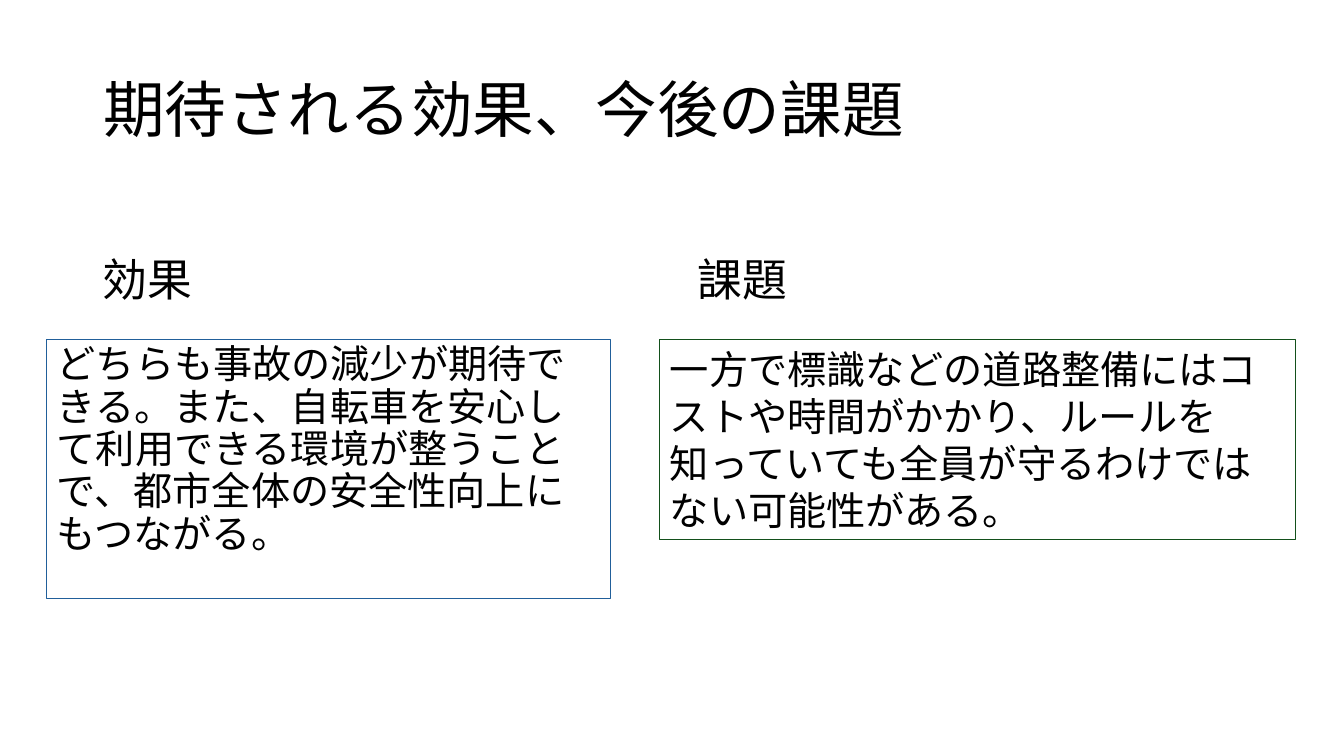
import dataclasses
import typing

import lxml.etree
import pptx
import pptx.dml.color
import pptx.enum.text
import pptx.oxml.ns
import pptx.text.text
import pptx.util

PX = 914400 / 100.8  # EMU in one px
FONT = "Noto Sans CJK JP"
COLOURS = {"text": "000000", "effects": "215F9A", "issues": "13501B"}


@dataclasses.dataclass(frozen=True)
class Block:
    text: str
    left: int
    top: int
    width: int
    height: int
    size: int
    line: typing.Optional[str] = None
    spacing: float = 1.0
    wrap: bool = True
    anchor: typing.Any = pptx.enum.text.MSO_ANCHOR.TOP


TITLE = Block("期待される効果、今後の課題", 93, 40, 1159, 146, 44,
              spacing=0.9, anchor=pptx.enum.text.MSO_ANCHOR.MIDDLE)
HEADINGS = [
    Block(text, left, 247, 111, 65, 32, wrap=False)
    for text, left in (("効果", 93), ("課題", 688))
]
BODIES = [
    Block("どちらも事故の減少が期待できる。また、自転車を安心して利用できる環境が整うことで、"
          "都市全体の安全性向上にもつながる。",
          47, 340, 564, 259, 28, line="effects", spacing=0.9),
    Block("一方で標識などの道路整備にはコストや時間がかかり、ルールを知っていても"
          "全員が守るわけではない可能性がある。",
          660, 340, 636, 200, 28, line="issues"),
]


def px(length: int) -> int:
    return round(length * PX)


def colour(name: str) -> pptx.dml.color.RGBColor:
    return pptx.dml.color.RGBColor.from_string(COLOURS[name])


def set_all(target: typing.Any, formats: dict[str, typing.Any]) -> None:
    for key, value in formats.items():
        setattr(target, key, value)


def write_text(frame: pptx.text.text.TextFrame, block: Block) -> None:
    set_all(frame, {"word_wrap": block.wrap, "vertical_anchor": block.anchor,
                    "auto_size": pptx.enum.text.MSO_AUTO_SIZE.NONE})
    paragraph = frame.paragraphs[0]
    set_all(paragraph, {"alignment": pptx.enum.text.PP_ALIGN.LEFT,
                        "line_spacing": block.spacing})
    run = paragraph.add_run()
    run.text = block.text
    set_all(run.font, {"name": FONT, "size": pptx.util.Pt(block.size)})
    run.font.color.rgb = colour("text")
    # Japanese glyphs take the East Asian typeface
    east_asian = lxml.etree.SubElement(run.font._element, pptx.oxml.ns.qn("a:ea"))
    east_asian.set("typeface", FONT)


def draw(shape: typing.Any, block: Block) -> None:
    set_all(shape, {side: px(getattr(block, side))
                    for side in ("left", "top", "width", "height")})
    write_text(shape.text_frame, block)
    if block.line:
        shape.line.color.rgb = colour(block.line)
        shape.line.width = pptx.util.Pt(0.75)


def main() -> None:
    deck = pptx.Presentation()
    set_all(deck, {"slide_width": px(1344), "slide_height": px(756)})
    slide = deck.slides.add_slide(deck.slide_layouts.get_by_name("Title Only"))

    # Title
    draw(slide.shapes.title, TITLE)

    # Column headings and framed texts
    for block in HEADINGS + BODIES:
        draw(slide.shapes.add_textbox(0, 0, 0, 0), block)

    deck.save("out.pptx")


if __name__ == "__main__":
    main()
